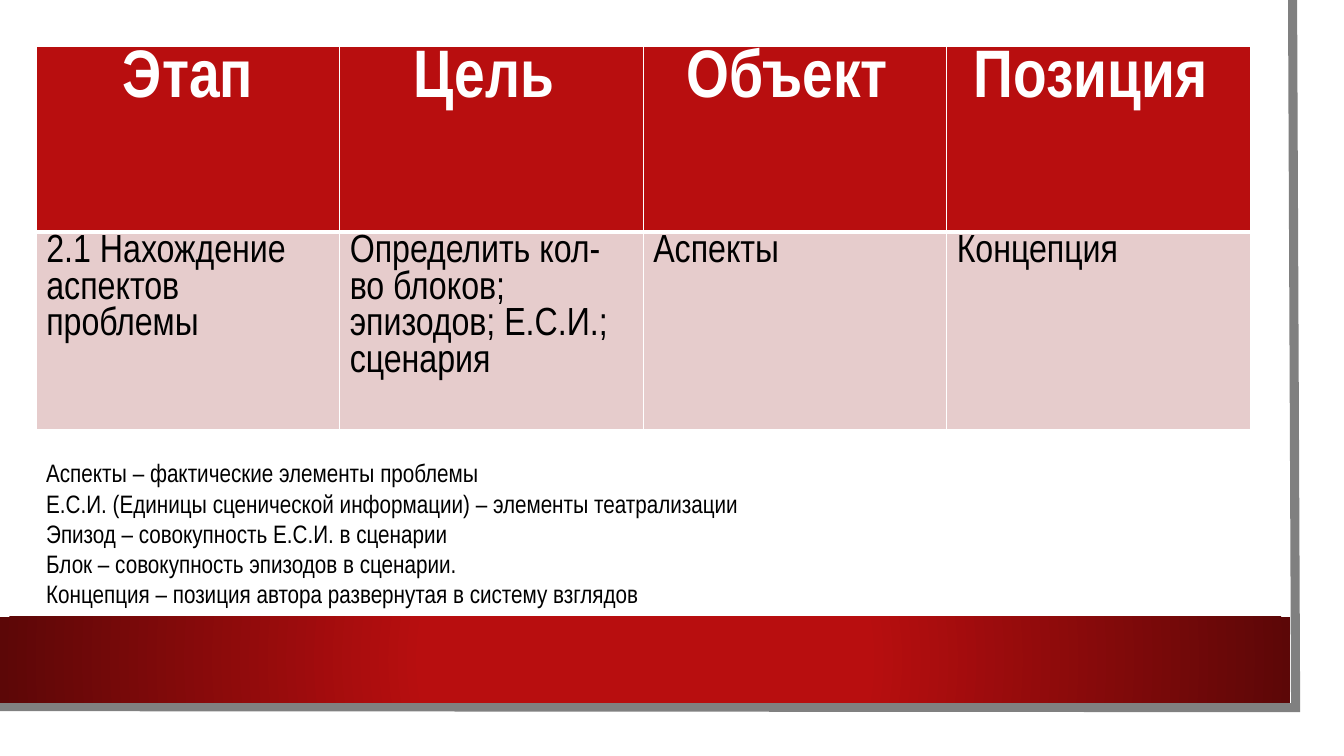
from lxml.etree import SubElement
from pptx import Presentation
from pptx.dml.color import RGBColor
from pptx.enum.shapes import MSO_SHAPE
from pptx.enum.text import PP_ALIGN
from pptx.oxml.ns import qn
from pptx.util import Inches, Pt

WHITE = RGBColor(0xFF, 0xFF, 0xFF)
BLACK = RGBColor(0, 0, 0)
GREY = RGBColor(0x80, 0x80, 0x80)
RED = RGBColor(0xB8, 0x0E, 0x0F)
DARK_RED = RGBColor(0x5C, 0x07, 0x07)
PINK = RGBColor(0xE6, 0xCC, 0xCC)
FONT = "Arial Narrow"
LEFT, WIDTH = Inches(0.36), Inches(12.04)

HEADERS = ["Этап", "Цель ", "Объект ", "Позиция "]
STAGE = [
    "2.1 Нахождение аспектов проблемы",
    "Определить кол-во блоков; эпизодов; Е.С.И.; сценария",
    "Аспекты",
    "Концепция",
]
DEFINITIONS = [
    "Аспекты – фактические элементы проблемы",
    "Е.С.И. (Единицы сценической информации) – элементы театрализации",
    "Эпизод – совокупность Е.С.И. в сценарии",
    "Блок – совокупность эпизодов в сценарии.",
    "Концепция – позиция автора развернутая в систему взглядов",
]


def set_font(para, size, color, bold=False):
    para.font.name = FONT
    para.font.size = Pt(size)
    para.font.bold = bold
    para.font.color.rgb = color


def add_borders(cell, widths):
    """Draw white borders; widths maps an edge tag to points."""
    properties = cell._tc.get_or_add_tcPr()
    for index, (edge, width) in enumerate(widths.items()):
        line = properties.makeelement(qn(f"a:{edge}"), {"w": str(Pt(width))})
        fill = SubElement(line, qn("a:solidFill"))
        SubElement(fill, qn("a:srgbClr"), val=str(WHITE))
        properties.insert(index, line)


deck = Presentation()
deck.slide_width, deck.slide_height = Inches(13.33), Inches(7.5)
page = deck.slides.add_slide(deck.slide_layouts[6])
shapes = page.shapes

# White sheet with its grey edge
sheet = shapes.add_shape(MSO_SHAPE.RECTANGLE, 0, 0, Inches(13.1), Inches(7.27))
sheet.shadow.inherit = False
sheet.fill.solid()
sheet.fill.fore_color.rgb = WHITE
sheet.line.fill.background()

outline = shapes.build_freeform(Inches(12.82), 0)
outline.add_line_segments(
    [(Inches(12.85), Inches(7.02)), (Inches(-0.03), Inches(7.01))], close=False)
edge = outline.convert_to_shape()
edge.shadow.inherit = False
edge.fill.background()
edge.line.color.rgb = GREY
edge.line.width = Pt(6.5)
SubElement(edge._element.spPr.find(qn("a:ln")), qn("a:miter"), lim="800000")

# Red band
band = shapes.add_shape(MSO_SHAPE.RECTANGLE, 0, Inches(6.12), Inches(12.8), Inches(0.85))
band.shadow.inherit = False
band.line.fill.background()
band.fill.gradient()
for stop, position, color in zip(band.fill.gradient_stops, (0.34, 1), (RED, DARK_RED)):
    stop.position = position
    stop.color.rgb = color
gradient = band._element.spPr.find(qn("a:gradFill"))
gradient.remove(gradient.find(qn("a:lin")))
circle = SubElement(gradient, qn("a:path"), path="circle")
SubElement(circle, qn("a:fillToRect"), l="50000", t="50000", r="50000", b="50000")

# Table of stages
table = shapes.add_table(2, 4, LEFT, Inches(0.46), WIDTH, Inches(3.8)).table
table.horz_banding = False
table.rows[0].height, table.rows[1].height = Inches(1.84), Inches(1.96)
row_styles = [
    (HEADERS, RED, WHITE, 48, True, PP_ALIGN.CENTER, {"lnT": 1, "lnB": 3}),
    (STAGE, PINK, BLACK, 28, False, PP_ALIGN.LEFT, {"lnT": 3, "lnB": 1}),
]
for row, (texts, fill, color, size, bold, align, rules) in enumerate(row_styles):
    for column, text in enumerate(texts):
        cell = table.cell(row, column)
        cell.text = text
        cell.margin_top = Inches(0.02)
        cell.fill.solid()
        cell.fill.fore_color.rgb = fill
        add_borders(cell, {"lnL": 1, "lnR": 1, **rules})
        para = cell.text_frame.paragraphs[0]
        para.alignment = align
        set_font(para, size, color, bold)

# Definitions
box = shapes.add_textbox(LEFT, Inches(4.49), WIDTH, Inches(1.92))
box.text_frame.word_wrap = True
box.text_frame.text = "\n".join(DEFINITIONS)
for para in box.text_frame.paragraphs:
    set_font(para, 18, BLACK)

deck.save("out.pptx")
